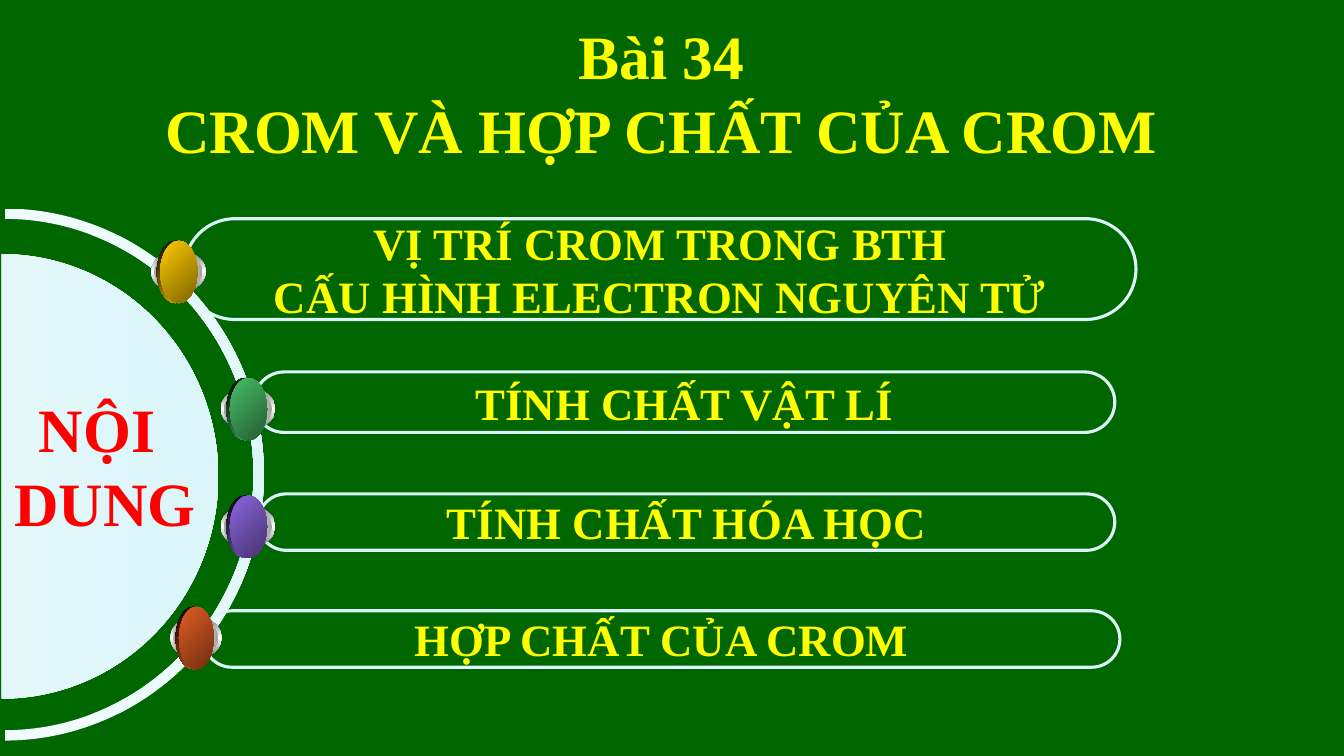
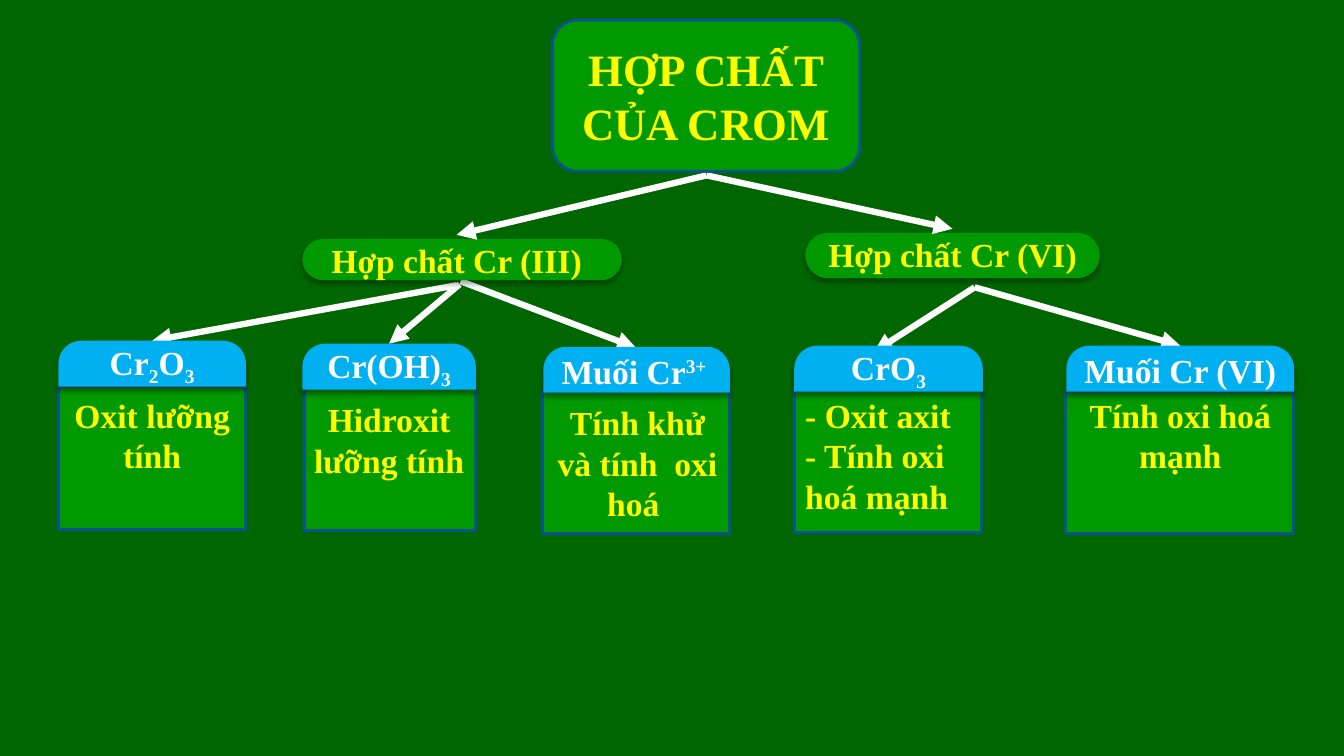
from copy import deepcopy

from pptx import Presentation
from pptx.dml.color import RGBColor
from pptx.enum import shapes, text
from pptx.oxml import parse_xml
from pptx.oxml.ns import nsdecls, qn
from pptx.util import Pt

# Shared style
FONT = "Times New Roman"
DARK_GREEN = RGBColor(0x00, 0x66, 0x00)
GREEN = RGBColor(0x00, 0x99, 0x00)
SKY = RGBColor(0x00, 0xB0, 0xF0)
BLUE = RGBColor(0x0B, 0x52, 0x92)
ICE = RGBColor(0xDB, 0xF5, 0xF9)
PALE_ICE = RGBColor(0xEF, 0xFB, 0xFC)
YELLOW = RGBColor(0xFF, 0xFF, 0x00)
RED = RGBColor(0xFF, 0x00, 0x00)
WHITE = RGBColor(0xFF, 0xFF, 0xFF)
BLACK = RGBColor(0x00, 0x00, 0x00)
GREY = RGBColor(0x76, 0x76, 0x76)
SILVER = RGBColor(0xA2, 0xA2, 0xA2)

KIND = shapes.MSO_SHAPE
CENTER, LEFT = text.PP_ALIGN.CENTER, text.PP_ALIGN.LEFT
TOP, MIDDLE = text.MSO_ANCHOR.TOP, text.MSO_ANCHOR.MIDDLE
PILL = (0.5,)
RIGHT_HALF = (162, 54)  # 270 to 90 degrees, in units of 5/3 degree


def write(box, content, *, size=24, color=YELLOW, align=CENTER, anchor=MIDDLE,
          wrap=True, top=3.6, shift=0):
    """Newlines part paragraphs; every second piece between bars is shifted."""
    frame = box.text_frame
    frame.word_wrap = wrap
    frame.vertical_anchor = anchor
    frame.margin_top = Pt(top)
    for row, line in enumerate(content.split("\n")):
        para = frame.add_paragraph() if row else frame.paragraphs[0]
        para.alignment = align
        for index, piece in enumerate(line.split("|")):
            if not piece:
                continue
            span = para.add_run()
            span.text = piece
            span.font.name, span.font.size, span.font.bold = FONT, Pt(size), True
            span.font.color.rgb = color
            if index % 2:
                span._r.get_or_add_rPr().set("baseline", str(shift * 1000))


def paint(box, fill, angle=0):
    """Fill with nothing, one colour, or a gradient of evenly spaced colours."""
    if fill is None:
        box.fill.background()
    elif isinstance(fill, RGBColor):
        box.fill.solid()
        box.fill.fore_color.rgb = fill
    else:
        box.fill.gradient()
        box.fill.gradient_angle = angle
        stops = box._element.spPr.find(".//" + qn("a:gsLst"))
        for _ in fill[2:]:
            stops.append(deepcopy(stops[0]))
        for index, stop in enumerate(box.fill.gradient_stops):
            stop.color.rgb = fill[index]
            stop.position = index / (len(fill) - 1)


class Builder:
    def __init__(self):
        self.deck = Presentation()
        self.deck.slide_width, self.deck.slide_height = Pt(960), Pt(540)
        self.page = None

    def new_page(self):
        self.page = self.deck.slides.add_slide(self.deck.slide_layouts[6])
        self.page.background.fill.solid()
        self.page.background.fill.fore_color.rgb = DARK_GREEN

    def shape(self, kind, place, fill=None, *, angle=0, line=None, weight=2,
              adjust=(), shadow=None, group=None):
        owner = group or self.page
        box = owner.shapes.add_shape(kind, *map(Pt, place))
        for index, value in enumerate(adjust):
            box.adjustments[index] = value
        box.shadow.inherit = False
        paint(box, fill, angle)
        if line is None:
            box.line.fill.background()
        else:
            box.line.color.rgb, box.line.width = line, Pt(weight)
        if shadow:
            alpha, blur, distance = shadow
            box._element.spPr.find(qn("a:effectLst")).append(parse_xml(
                f'<a:outerShdw {nsdecls("a")} blurRad="{Pt(blur)}" dist="{Pt(distance)}" '
                f'dir="5400000" rotWithShape="0"><a:srgbClr val="000000">'
                f'<a:alpha val="{alpha * 1000}"/></a:srgbClr></a:outerShdw>'))
        return box

    def label(self, place, content, **style):
        box = self.page.shapes.add_textbox(*map(Pt, place))
        write(box, content, **style)
        return box

    def bead(self, left, top, width, color, shade):
        group = self.page.shapes.add_group_shape()
        scale = width / 39
        for dx, dy, wide, high, fill, angle in (
                (0, 0, 39, 30, (GREY, WHITE, GREY), 270),
                (2, 2, 34.5, 26.5, (SILVER, WHITE, SILVER), 0),
                (4, -7, 26.5, 44.5, (BLACK, color), 315),
                (6.5, -7, 26.5, 44.5, (color, shade), 315)):
            self.shape(KIND.OVAL, (left + dx * scale, top + dy, wide * scale, high),
                       fill, angle=angle, group=group)

    def arrow(self, start, end):
        link = self.page.shapes.add_connector(
            shapes.MSO_CONNECTOR.STRAIGHT, *map(Pt, start + end))
        link.line.color.rgb, link.line.width = WHITE, Pt(4.5)
        link.line._get_or_add_ln().append(
            parse_xml(f'<a:tailEnd {nsdecls("a")} type="triangle"/>'))
        link._element.spPr.append(parse_xml(f'<a:effectLst {nsdecls("a")}/>'))
        return link


def contents_page(build):
    build.new_page()
    # Half dial on the left edge
    build.shape(KIND.BLOCK_ARC, (-181.5, 149, 370, 380), (PALE_ICE, ICE, PALE_ICE),
                angle=270, adjust=RIGHT_HALF + (0.02,))
    build.shape(KIND.CHORD, (-153.5, 181.5, 309.5, 317.5), (PALE_ICE, ICE),
                adjust=RIGHT_HALF)
    # Topics
    for place, topic in (
            ((145.44, 436.32, 654.48, 40.32), "HỢP CHẤT CỦA CROM"),
            ((184.32, 352.8, 612, 40.32), "TÍNH CHẤT HÓA HỌC"),
            ((181.44, 265.68, 614.88, 43.2), "TÍNH CHẤT VẬT LÍ"),
            ((131.76, 156.24, 679.68, 72),
             "VỊ TRÍ CROM TRONG BTH\nCẤU HÌNH ELECTRON NGUYÊN TỬ")):
        pill = build.shape(KIND.ROUNDED_RECTANGLE, place, line=ICE, weight=2.25, adjust=PILL)
        write(pill, topic, size=32, wrap=False)
    # Beads on the ring
    for left, top, width, color, shade in (
            (108, 179, 39, "FFCC00", "7C6300"),
            (157.75, 277, 39, "48BE67", "235C32"),
            (157.75, 361, 39, "8D67E1", "45326D"),
            (121.75, 440.5, 36.5, "E35E23", "6E2E11")):
        build.bead(left, top, width, RGBColor.from_string(color), RGBColor.from_string(shade))
    # Headings
    build.label((0, 275, 149.76, 113.76), "NỘI \nDUNG", size=44, color=RED)
    title = build.shape(KIND.RECTANGLE, (79.4, 8.64, 786.24, 113.76), DARK_GREEN)
    write(title, "Bài 34\nCROM VÀ HỢP CHẤT CỦA CROM", size=44)


def compounds_page(build):
    build.new_page()
    # Card bodies
    for left, top, width in ((41.76, 276.48, 133.92), (217.44, 277.2, 122.4),
                             (387.36, 279.36, 133.92), (567.36, 278.64, 133.92),
                             (761.04, 279.36, 162.72)):
        build.shape(KIND.RECTANGLE, (left, top, width, 101.5), GREEN, line=BLUE)
    # Arrows to the cards, behind pills and tabs
    to_cards = [build.arrow(start, end) for start, end in (
        ((326.16, 203.76), (108.72, 243.36)), ((328.32, 203.04), (277.92, 245.52)),
        ((329.04, 200.88), (454.32, 248.4)), ((696.24, 205.2), (624.24, 251.28)),
        ((696.24, 205.2), (843.12, 246.96)))]
    # Branches
    for place in ((575.28, 166.32, 210.24, 32.4), (216, 170.64, 228.24, 29.52)):
        build.shape(KIND.ROUNDED_RECTANGLE, place, GREEN, adjust=PILL, shadow=(32, 3.5, 2.2))
    third = build.label((227.52, 167.76, 197.28, 36), "Hợp chất Cr (III)",
                        anchor=TOP, wrap=False)
    sixth = build.label((583.92, 163.44, 192.96, 36), "Hợp chất Cr (VI)", anchor=TOP)
    to_cards[0].begin_connect(third, 2)
    # Card tabs
    for left, top, width, name, shift in (
            (41.76, 243.36, 133.92, "Cr|2|O|3", -25),
            (216, 245.52, 123.84, "Cr(OH)|3", -25),
            (388.08, 247.68, 133.2, "Muối Cr|3+ ", 30),
            (567.36, 246.96, 134.64, "CrO|3", -25),
            (761.76, 246.96, 162.72, "Muối Cr (VI)", 0)):
        tab = build.shape(KIND.ROUND_2_SAME_RECTANGLE, (left, top, width, 32.75), SKY,
                          adjust=(0.5, 0), shadow=(40, 4, 3))
        write(tab, name, color=WHITE, top=0, shift=shift)
    # Arrows to the branches
    to_third = build.arrow((504.72, 125.28), (326.16, 167.76))
    to_sixth = build.arrow((504.72, 125.28), (680.4, 163.44))
    to_third.end_connect(third, 0)
    to_sixth.end_connect(sixth, 0)
    # Card notes
    for place, note, align in (
            ((41.76, 278.64, 133.92, 65.5), "Oxit lưỡng tính", CENTER),
            ((216, 281.52, 123.84, 65.5), "Hidroxit lưỡng tính", CENTER),
            ((389.52, 283.68, 131.76, 94.5), "Tính khử và tính  oxi hoá ", CENTER),
            ((568.08, 278.64, 133.92, 94.5), "- Oxit axit\n- Tính oxi hoá mạnh", LEFT),
            ((761.76, 278.64, 162.72, 65.5), "Tính oxi hoá mạnh", CENTER)):
        build.label(place, note, align=align, anchor=TOP)
    # Root
    root = build.shape(KIND.ROUNDED_RECTANGLE, (394.56, 14.4, 219.6, 108), GREEN, line=BLUE)
    write(root, "HỢP CHẤT CỦA CROM", size=32)


def main():
    build = Builder()
    contents_page(build)
    compounds_page(build)
    build.deck.save("out.pptx")


if __name__ == "__main__":
    main()
